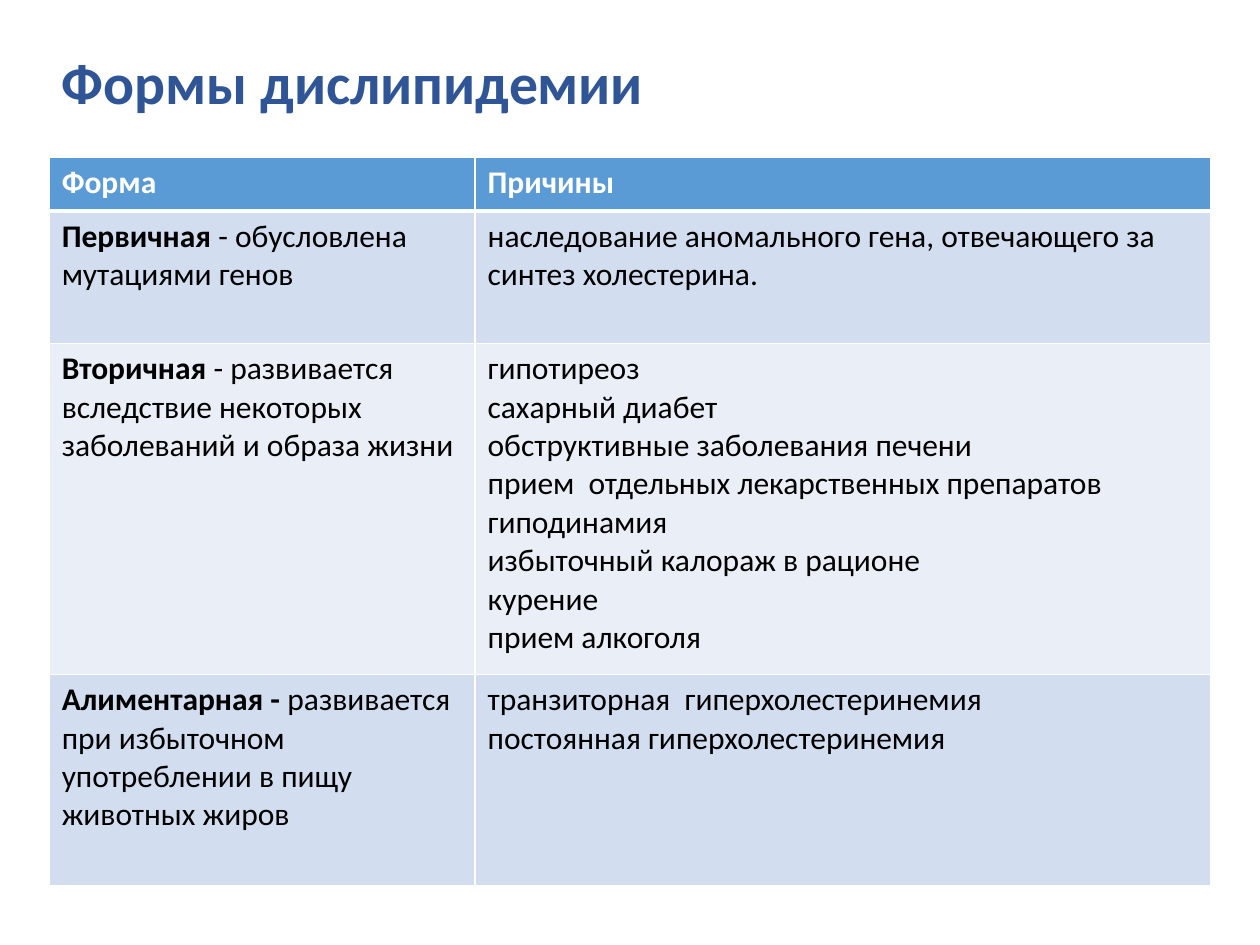
"""Build a slide with a table of the forms of dyslipidemia and their causes."""
import pptx
import pptx.dml.color
import pptx.enum.text
import pptx.oxml
import pptx.oxml.ns
import pptx.util

Pt = pptx.util.Pt
RGBColor = pptx.dml.color.RGBColor

TITLE = "Формы дислипидемии"
HEADINGS = ("Форма", "Причины")
FORMS = [
    ("Первичная", " - обусловлена мутациями генов",
     ["наследование аномального гена, отвечающего за синтез холестерина."]),
    ("Вторичная", " - развивается вследствие некоторых заболеваний и образа жизни",
     ["гипотиреоз", "сахарный диабет", "обструктивные заболевания печени",
      "прием  отдельных лекарственных препаратов", "гиподинамия",
      "избыточный калораж в рационе", "курение", "прием алкоголя"]),
    ("Алиментарная - ", "развивается при избыточном употреблении в пищу животных жиров",
     ["транзиторная  гиперхолестеринемия", "постоянная гиперхолестеринемия"]),
]

NAVY = RGBColor(0x2F, 0x55, 0x97)
BLUE = RGBColor(0x5B, 0x9B, 0xD5)
BANDS = (RGBColor(0xD2, 0xDE, 0xEF), RGBColor(0xEA, 0xEF, 0xF7))
WHITE = RGBColor(0xFF, 0xFF, 0xFF)
BLACK = RGBColor(0, 0, 0)

LEFT = 28.1
TABLE_TOP = 90
COLUMN_WIDTHS = (243.4, 420.5)
ROW_HEIGHTS = (30.6, 75.6, 189.2, 120.8)
TITLE_BOX = {"left": Pt(LEFT), "top": Pt(25.9), "width": Pt(588.2), "height": Pt(46.1)}
TITLE_FRAME = {
    "word_wrap": True,
    "vertical_anchor": pptx.enum.text.MSO_ANCHOR.MIDDLE,
    "margin_left": Pt(7.2), "margin_right": Pt(7.2),
    "margin_top": Pt(3.6), "margin_bottom": Pt(3.6),
}
TITLE_PARAGRAPH = {"alignment": pptx.enum.text.PP_ALIGN.LEFT, "line_spacing": 0.9}


def apply_format(target, values):
    for name, value in values.items():
        setattr(target, name, value)


def add_run(paragraph, text, size, color, bold):
    run = paragraph.add_run()
    run.text = text
    apply_format(run.font, {"name": "Calibri", "size": Pt(size), "bold": bold})
    run.font.color.rgb = color


def add_borders(cell, widths):
    properties = cell._tc.get_or_add_tcPr()
    for side, width in widths.items():
        properties.append(pptx.oxml.parse_xml(
            f'<a:ln{side} {pptx.oxml.ns.nsdecls("a")} w="{Pt(width)}">'
            f'<a:solidFill><a:srgbClr val="{WHITE}"/></a:solidFill></a:ln{side}>'))


def fill_cell(cell, paragraphs, color, background, borders):
    add_borders(cell, borders)
    cell.fill.solid()
    cell.fill.fore_color.rgb = background
    for index, runs in enumerate(paragraphs):
        frame = cell.text_frame
        paragraph = frame.add_paragraph() if index else frame.paragraphs[0]
        for text, bold in runs:
            add_run(paragraph, text, 18, color, bold)


def add_title(slide):
    title = slide.shapes.title
    apply_format(title, TITLE_BOX)
    apply_format(title.text_frame, TITLE_FRAME)
    paragraph = title.text_frame.paragraphs[0]
    apply_format(paragraph, TITLE_PARAGRAPH)
    add_run(paragraph, TITLE, 33, NAVY, True)


def add_forms_table(slide):
    rows = [[[[(heading, True)]] for heading in HEADINGS]]
    for name, description, causes in FORMS:
        rows.append([[[(name, True), (description, False)]],
                     [[(cause, False)] for cause in causes]])
    table = slide.shapes.add_table(
        len(rows), len(HEADINGS), Pt(LEFT), Pt(TABLE_TOP),
        Pt(sum(COLUMN_WIDTHS)), Pt(sum(ROW_HEIGHTS))).table
    for column, width in zip(table.columns, COLUMN_WIDTHS):
        column.width = Pt(width)
    for row_index, (row, height) in enumerate(zip(rows, ROW_HEIGHTS)):
        table.rows[row_index].height = Pt(height)
        header = row_index == 0
        background = BLUE if header else BANDS[(row_index - 1) % 2]
        borders = {"L": 1, "R": 1, "T": 3 if row_index == 1 else 1, "B": 3 if header else 1}
        for column_index, paragraphs in enumerate(row):
            fill_cell(table.cell(row_index, column_index), paragraphs,
                      WHITE if header else BLACK, background, borders)


def main():
    presentation = pptx.Presentation()
    apply_format(presentation, {"slide_width": Pt(720), "slide_height": Pt(540)})
    slide = presentation.slides.add_slide(presentation.slide_layouts[5])
    add_title(slide)
    add_forms_table(slide)
    presentation.save("out.pptx")


if __name__ == "__main__":
    main()
